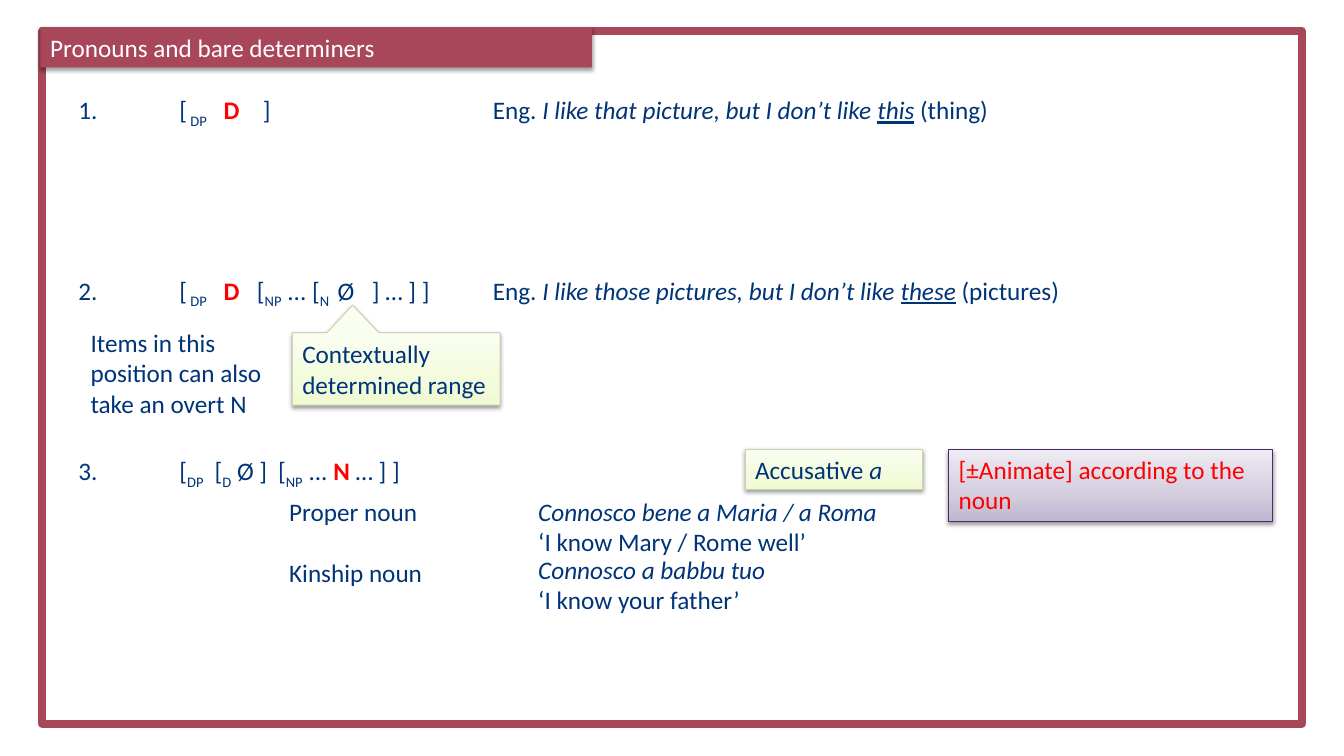
from copy import deepcopy

from lxml import etree
from pptx import Presentation
from pptx.dml.color import RGBColor
from pptx.enum.shapes import MSO_SHAPE
from pptx.enum.text import MSO_ANCHOR, MSO_AUTO_SIZE, PP_ALIGN
from pptx.oxml.ns import qn
from pptx.util import Pt

RECTANGLE = MSO_SHAPE.RECTANGLE
CALLOUT = MSO_SHAPE.RECTANGULAR_CALLOUT
TOP, MIDDLE = MSO_ANCHOR.TOP, MSO_ANCHOR.MIDDLE
LEFT = PP_ALIGN.LEFT
FIT_SHAPE, NO_FIT = MSO_AUTO_SIZE.SHAPE_TO_FIT_TEXT, MSO_AUTO_SIZE.NONE

PX = 9144  # 100 px to the inch
FONT = "Calibri"
SIZE = Pt(18)
LINE_GAP = Pt(22)

WHITE = RGBColor(0xFF, 0xFF, 0xFF)
NAVY = RGBColor(0x00, 0x34, 0x78)
RED = RGBColor(0xFF, 0x00, 0x00)
CRIMSON = RGBColor(0xA8, 0x47, 0x5A)
GREEN_LINE = RGBColor(0xCA, 0xD3, 0xB0)
PURPLE_LINE = RGBColor(0x49, 0x2E, 0x69)
GREEN = (RGBColor(0xEE, 0xFA, 0xD0), RGBColor(0xF3, 0xFB, 0xDD), RGBColor(0xFA, 0xFE, 0xF1))
PURPLE = (RGBColor(0xBF, 0xB6, 0xD0), RGBColor(0xD2, 0xCC, 0xDD), RGBColor(0xEE, 0xEB, 0xF3))
STOPS = (0, 0.35, 1)


def emu(*lengths):
    return [length * PX for length in lengths]


def add_tabs(paragraph, tabs):
    tab_list = etree.SubElement(paragraph._p.get_or_add_pPr(), qn("a:tabLst"))
    for position in tabs:
        etree.SubElement(tab_list, qn("a:tab"), pos=str(position * PX), algn="l")


def write(shape, paragraphs, color=NAVY, anchor=TOP, fit=FIT_SHAPE, tabs=(), gap=None):
    """Fill a shape with paragraphs of (text, style) runs.

    Style letters: i italic, u underlined, s subscript, h highlighted head.
    """
    frame = shape.text_frame
    frame.word_wrap = True
    frame.auto_size = fit
    frame.vertical_anchor = anchor
    for index, runs in enumerate(paragraphs):
        paragraph = frame.add_paragraph() if index else frame.paragraphs[0]
        paragraph.alignment = LEFT
        if index and gap:
            paragraph.space_before = gap
        if tabs:
            add_tabs(paragraph, tabs)
        for text, style in runs:
            run = paragraph.add_run()
            run.text = text
            font = run.font
            font.name, font.size = FONT, SIZE
            font.color.rgb = RED if "h" in style else color
            font.bold = "h" in style
            font.italic = "i" in style
            font.underline = "u" in style
            if "s" in style:
                font._element.set("baseline", "-25000")


def add_text(shapes, box, paragraphs, tabs=(), gap=None):
    write(shapes.add_textbox(*emu(*box)), paragraphs, tabs=tabs, gap=gap)


def add_soft_shadow(shape):
    shape.shadow.inherit = False
    effects = shape._element.spPr.find(qn("a:effectLst"))
    shadow = etree.SubElement(effects, qn("a:outerShdw"), blurRad="40000", dist="20000",
                              dir="5400000", rotWithShape="0")
    color = etree.SubElement(shadow, qn("a:srgbClr"), val="000000")
    etree.SubElement(color, qn("a:alpha"), val="38000")


def add_gradient_box(shapes, kind, box, colors, line_color):
    shape = shapes.add_shape(kind, *emu(*box))
    fill = shape.fill
    fill.gradient()
    fill.gradient_angle = 90
    stop_list = shape._element.spPr.find(".//" + qn("a:gsLst"))
    stop_list.insert(1, deepcopy(stop_list[0]))
    for stop, position, color in zip(fill.gradient_stops, STOPS, colors):
        stop.position = position
        stop.color.rgb = color
    shape.line.color.rgb = line_color
    shape.line.width = Pt(0.75)
    add_soft_shadow(shape)
    return shape


def add_frame(shapes):
    frame = shapes.add_shape(RECTANGLE, *emu(42, 31, 1249, 687))
    frame.fill.background()
    frame.line.color.rgb = CRIMSON
    frame.line.width = Pt(5.67)
    frame.shadow.inherit = False


def add_title(shapes, text):
    title = shapes.add_shape(RECTANGLE, *emu(40, 27, 547, 40))
    title.fill.solid()
    title.fill.fore_color.rgb = CRIMSON
    title.line.fill.background()
    add_soft_shadow(title)
    write(title, [[(text, "")]], WHITE)


def add_english_example(shapes, top, start, pronoun, noun):
    runs = [("Eng. ", ""), (start, "i"), (pronoun, "iu"), (noun, "")]
    add_text(shapes, (479, top, 723, 40), [runs])


def add_sardinian_example(shapes, top, sentence, gloss):
    add_text(shapes, (524, top, 480, 71), [[(sentence, "i")], [(gloss, "")]])


def main():
    presentation = Presentation()
    presentation.slide_width, presentation.slide_height = emu(1333, 750)
    slide = presentation.slides.add_slide(presentation.slide_layouts[6])
    shapes = slide.shapes
    add_frame(shapes)
    add_title(shapes, "Pronouns and bare determiners")

    bare = shapes.add_group_shape().shapes
    add_text(bare, (68, 89, 361, 40),
             [[("1.\t[", ""), (" DP\t", "s"), ("D\t", "h"), ("]", "")]],
             tabs=(100, 144, 183))
    add_english_example(bare, 89, "I like that picture, but I don’t like ", "this", " (thing)")

    silent = shapes.add_group_shape().shapes
    add_text(silent, (68, 268, 411, 40),
             [[("2.\t[", ""), (" DP\t", "s"), ("D\t", "h"), ("[", ""), ("NP", "s"),
               (" ... [", ""), ("N\t", "s"), ("Ø\t] … ] ]", "")]],
             tabs=(100, 144, 177, 257, 291))
    callout = add_gradient_box(silent, CALLOUT, (290, 330, 206, 72), GREEN, GREEN_LINE)
    callout.adjustments[0], callout.adjustments[1] = -0.21, -0.88
    write(callout, [[("Contextually determined range", "")]], anchor=MIDDLE, fit=NO_FIT)
    add_english_example(silent, 268, "I like those pictures, but I don’t like ", "these",
                        " (pictures)")

    add_text(shapes, (68, 447, 389, 40),
             [[("3.\t[", ""), ("DP\t", "s"), ("[", ""), ("D", "s"), (" Ø ]\t[", ""),
               ("NP", "s"), (" ... ", ""), ("N", "h"), (" … ] ]", "")]],
             tabs=(100, 135, 198))
    add_text(shapes, (277, 487, 156, 101), [[("Proper noun", "")], [("Kinship noun", "")]],
             gap=LINE_GAP)
    accusative = add_gradient_box(shapes, RECTANGLE, (739, 446, 176, 40), GREEN, GREEN_LINE)
    write(accusative, [[("Accusative ", ""), ("a", "i")]])
    add_text(shapes, (80, 320, 197, 101),
             [[("Items in this position can also take an overt N", "")]])
    add_sardinian_example(shapes, 487, "Connosco bene a Maria / a Roma",
                          "‘I know Mary / Rome well’")
    animate = add_gradient_box(shapes, RECTANGLE, (941, 446, 321, 71), PURPLE, PURPLE_LINE)
    write(animate, [[("[±Animate] according to the", "")], [("noun", "")]], RED)
    add_sardinian_example(shapes, 545, "Connosco a babbu tuo", "‘I know your father’")

    presentation.save("out.pptx")


if __name__ == "__main__":
    main()
